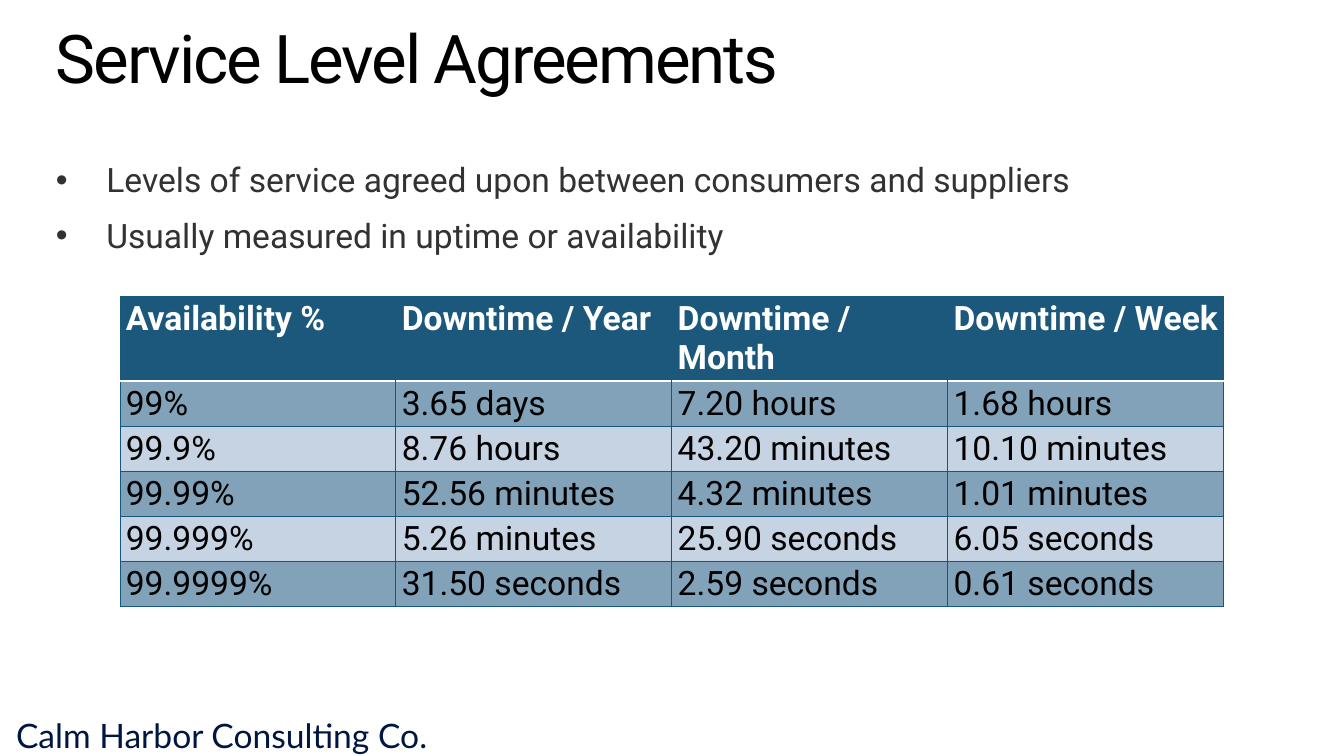
from lxml import etree
from pptx import Presentation
from pptx.dml.color import RGBColor
from pptx.enum import text
from pptx.oxml.ns import qn
from pptx.util import Pt

COLORS = {
    "title": "000000", "body": "323232", "footer": "001642",
    "header": "1B587C", "header_text": "FFFFFF", "cell_text": "000000",
    "band_dark": "82A2B9", "band_light": "C6D3E2",
    "grid": "18577C", "header_rule": "FFFFFF",
}
NO_STYLE = "{2D5ABB26-0587-4C30-8999-92F81FD0307C}"

BULLETS = [
    "Levels of service agreed upon between consumers and suppliers",
    "Usually measured in uptime or availability",
]
ROWS = [
    ["Availability %", "Downtime / Year", "Downtime / Month", "Downtime / Week"],
    ["99%", "3.65 days", "7.20 hours", "1.68 hours"],
    ["99.9%", "8.76 hours", "43.20 minutes", "10.10 minutes"],
    ["99.99%", "52.56 minutes", "4.32 minutes", "1.01 minutes"],
    ["99.999%", "5.26 minutes", "25.90 seconds", "6.05 seconds"],
    ["99.9999%", "31.50 seconds", "2.59 seconds", "0.61 seconds"],
]


def add_text(p, value, *, color, font="Roboto", size=24, bold=False, spacing=None):
    r = p.add_run()
    r.text = value
    r.font.name, r.font.size, r.font.bold = font, Pt(size), bold
    r.font.color.rgb = RGBColor.from_string(COLORS[color])
    if spacing is not None:
        r.font._element.set("spc", str(int(spacing * 100)))
    return r


class SlideBuilder:
    """Holds the style and the current slide."""

    def __init__(self, prs):
        self.s = prs.slides.add_slide(prs.slide_layouts[5])

    def frame(self, sp, anchor=text.MSO_ANCHOR.TOP):
        tf = sp.text_frame
        tf.word_wrap = True
        tf.auto_size = text.MSO_AUTO_SIZE.NONE
        tf.vertical_anchor = anchor
        tf.margin_left = tf.margin_right = tf.margin_top = tf.margin_bottom = 0
        return tf

    def box(self, x, y, w, h):
        return self.frame(self.s.shapes.add_textbox(Pt(x), Pt(y), Pt(w), Pt(h)))

    def title(self, value, x, y, w, h):
        sp = self.s.shapes.title
        sp.left, sp.top, sp.width, sp.height = Pt(x), Pt(y), Pt(w), Pt(h)
        p = self.frame(sp, text.MSO_ANCHOR.MIDDLE).paragraphs[0]
        p.alignment = text.PP_ALIGN.LEFT
        p.line_spacing = 0.9
        add_text(p, value, color="title", size=48, spacing=-1.5)

    def bullets(self, items, x, y, w, h):
        tf = self.box(x, y, w, h)
        for i, item in enumerate(items):
            p = tf.add_paragraph() if i else tf.paragraphs[0]
            p.space_before, p.space_after = Pt(5 if i else 0), Pt(6)
            pPr = p._p.get_or_add_pPr()
            pPr.set("marL", str(Pt(36)))
            pPr.set("indent", str(Pt(-36)))
            etree.SubElement(pPr, qn("a:buFont")).set("typeface", "Arial")
            etree.SubElement(pPr, qn("a:buChar")).set("char", "•")
            add_text(p, item, color="body")

    def footer(self, value, x, y, w, h):
        add_text(self.box(x, y, w, h).paragraphs[0], value, color="footer", font="Lato")

    def borders(self, cell, lines):
        tcPr = cell._tc.get_or_add_tcPr()
        # Border elements come before the fill, in the order L, R, T, B
        for i, (side, (color, width)) in enumerate(lines.items()):
            ln = etree.Element(qn("a:ln" + side), w=str(Pt(width)))
            fill = etree.SubElement(ln, qn("a:solidFill"))
            etree.SubElement(fill, qn("a:srgbClr")).set("val", COLORS[color])
            tcPr.insert(i, ln)

    def table(self, rows, x, y, w, header_h, row_h):
        cols = len(rows[0])
        h = header_h + row_h * (len(rows) - 1)
        tb = self.s.shapes.add_table(len(rows), cols, Pt(x), Pt(y), Pt(w), Pt(h)).table
        tb._tbl.tblPr.find(qn("a:tableStyleId")).text = NO_STYLE
        for col in tb.columns:
            col.width = Pt(w / cols)
        grid, rule = ("grid", 0.75), ("header_rule", 2)
        for i, row in enumerate(rows):
            head = i == 0
            tb.rows[i].height = Pt(header_h if head else row_h)
            fill = "header" if head else "band_dark" if i % 2 else "band_light"
            for j, value in enumerate(row):
                cell = tb.cell(i, j)
                cell.margin_left, cell.margin_right = Pt(4.2), Pt(2)
                cell.margin_top = cell.margin_bottom = Pt(2)
                cell.fill.solid()
                cell.fill.fore_color.rgb = RGBColor.from_string(COLORS[fill])
                add_text(cell.text_frame.paragraphs[0], value, bold=head,
                         color="header_text" if head else "cell_text")
                lines = {"L": grid, "R": grid, "T": rule if i == 1 else grid,
                         "B": rule if head else grid}
                if head and j > 0:
                    del lines["L"]
                if head and j < cols - 1:
                    del lines["R"]
                self.borders(cell, lines)


def main():
    prs = Presentation()
    prs.slide_width, prs.slide_height = Pt(960), Pt(540)
    b = SlideBuilder(prs)

    # Footer
    b.footer("Calm Harbor Consulting Co.", 11.5, 511, 371.5, 28.8)
    # Title and key points
    b.title("Service Level Agreements", 40, 18, 880, 52.6)
    b.bullets(BULLETS, 40, 113.8, 880, 396)
    # Availability table
    b.table(ROWS, 85.7, 211.7, 788.4, 60.6, 32.2)

    prs.save("out.pptx")


if __name__ == "__main__":
    main()
